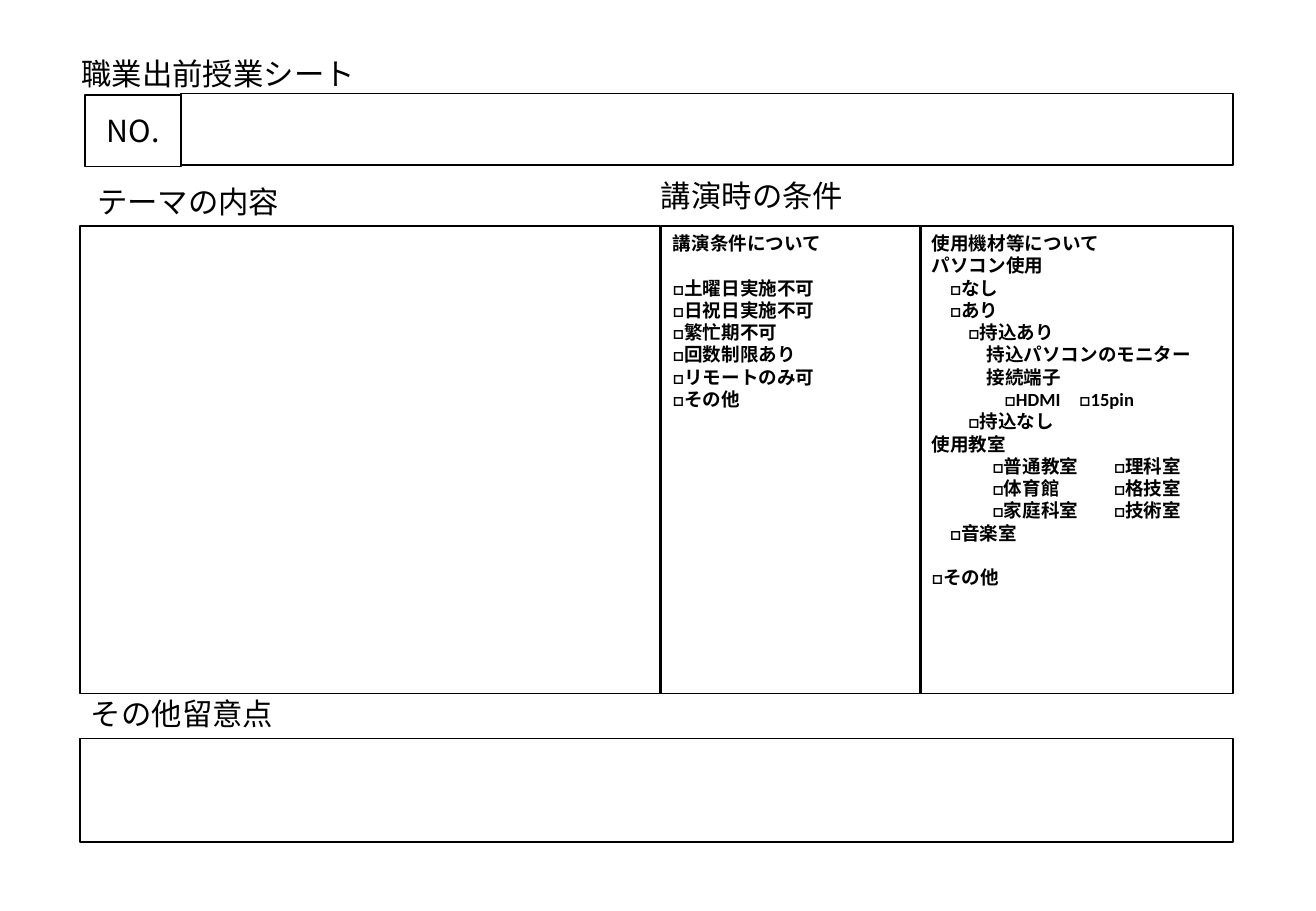
from dataclasses import dataclass
from lxml import etree
from pptx import Presentation
from pptx import util as u
from pptx.dml import color
from pptx.enum import shapes, text
from pptx.oxml import ns


@dataclass
class Theme:
    ink: color.RGBColor = color.RGBColor(0, 0, 0)
    line: u.Pt = u.Pt(1)
    head: tuple = ("Noto Sans CJK JP", u.Pt(18), False)
    body: tuple = ("Calibri", u.Pt(11), True)
    gap: u.Pt = u.Pt(13.2)
    step: u.Inches = u.Inches(0.15)
    tab: u.Inches = u.Inches(1.23)


theme = Theme()
TOP, MID = text.MSO_ANCHOR.TOP, text.MSO_ANCHOR.MIDDLE
LEFT, MIDST = text.PP_ALIGN.LEFT, text.PP_ALIGN.CENTER


def write(shape, rows, style, anchor=TOP, align=LEFT, grow=False):
    frame = shape.text_frame
    size = text.MSO_AUTO_SIZE.SHAPE_TO_FIT_TEXT if grow else text.MSO_AUTO_SIZE.NONE
    form = {"word_wrap": True, "vertical_anchor": anchor, "auto_size": size}
    for key, value in form.items():
        setattr(frame, key, value)
    for i, (level, words, gap) in enumerate(rows):
        para = frame.paragraphs[0] if i == 0 else frame.add_paragraph()
        para.alignment = align
        para.space_before = theme.gap if gap else u.Pt(0)
        props = para._p.get_or_add_pPr()
        props.set("marL", str(int(level * theme.step)))
        props.set("indent", "0")
        if "\t" in words:
            stops = etree.SubElement(props, ns.qn("a:tabLst"))
            for place in (theme.step, theme.tab):
                etree.SubElement(stops, ns.qn("a:tab"), pos=str(int(place)), algn="l")
        run = para.add_run()
        run.text = words
        font = run.font
        for key, value in zip(("name", "size", "bold"), style):
            setattr(font, key, value)
        font.color.rgb = theme.ink
        etree.SubElement(run._r.get_or_add_rPr(), ns.qn("a:ea"), typeface=style[0])


def box(*place):
    shape = slide.shapes.add_shape(shapes.MSO_SHAPE.RECTANGLE, *map(u.Inches, place))
    shape.shadow.inherit = False
    shape.fill.background()
    shape.line.color.rgb = theme.ink
    shape.line.width = theme.line
    return shape


deck = Presentation()
deck.slide_width, deck.slide_height = u.Inches(10.83), u.Inches(7.5)
slide = deck.slides.add_slide(deck.slide_layouts[5])

title = slide.shapes.title
spot = {"left": 0.57, "top": 0.4, "width": 3.35, "height": 0.4}
for key, value in spot.items():
    setattr(title, key, u.Inches(value))
write(title, [(0, "職業出前授業シート", False)], theme.head, grow=True)

for place in ((0.66, 1.86, 4.77, 3.85), (1.49, 0.77, 8.66, 0.59), (0.66, 6.08, 9.49, 0.85)):
    box(*place)

number = box(0.7, 0.78, 0.79, 0.59)
write(number, [(0, "NO.", False)], theme.head, MID, MIDST)

heads = (
    (5.34, 1.41, "講演時の条件"),
    (0.7, 1.46, "テーマの内容"),
    (0.65, 5.67, "その他留意点"),
)
for left, top, words in heads:
    label = slide.shapes.add_textbox(*map(u.Inches, (left, top, 3.35, 0.4)))
    write(label, [(0, words, False)], theme.head, grow=True)

terms = [
    (0, "講演条件について", False),
    (0, "□土曜日実施不可", True),
    (0, "□日祝日実施不可", False),
    (0, "□繁忙期不可", False),
    (0, "□回数制限あり", False),
    (0, "□リモートのみ可", False),
    (0, "□その他", False),
]
tools = [
    (0, "使用機材等について", False),
    (0, "パソコン使用", False),
    (1, "□なし", False),
    (1, "□あり", False),
    (2, "□持込あり", False),
    (3, "持込パソコンのモニター", False),
    (3, "接続端子", False),
    (4, "□HDMI　□15pin", False),
    (2, "□持込なし", False),
    (0, "使用教室", False),
    (0, "\t□普通教室\t□理科室", False),
    (0, "\t□体育館\t□格技室", False),
    (0, "\t□家庭科室\t□技術室", False),
    (1, "□音楽室", False),
    (0, "□その他", True),
]
for left, width, rows in ((5.44, 2.14, terms), (7.57, 2.58, tools)):
    write(box(left, 1.86, width, 3.85), rows, theme.body)

deck.save("out.pptx")
